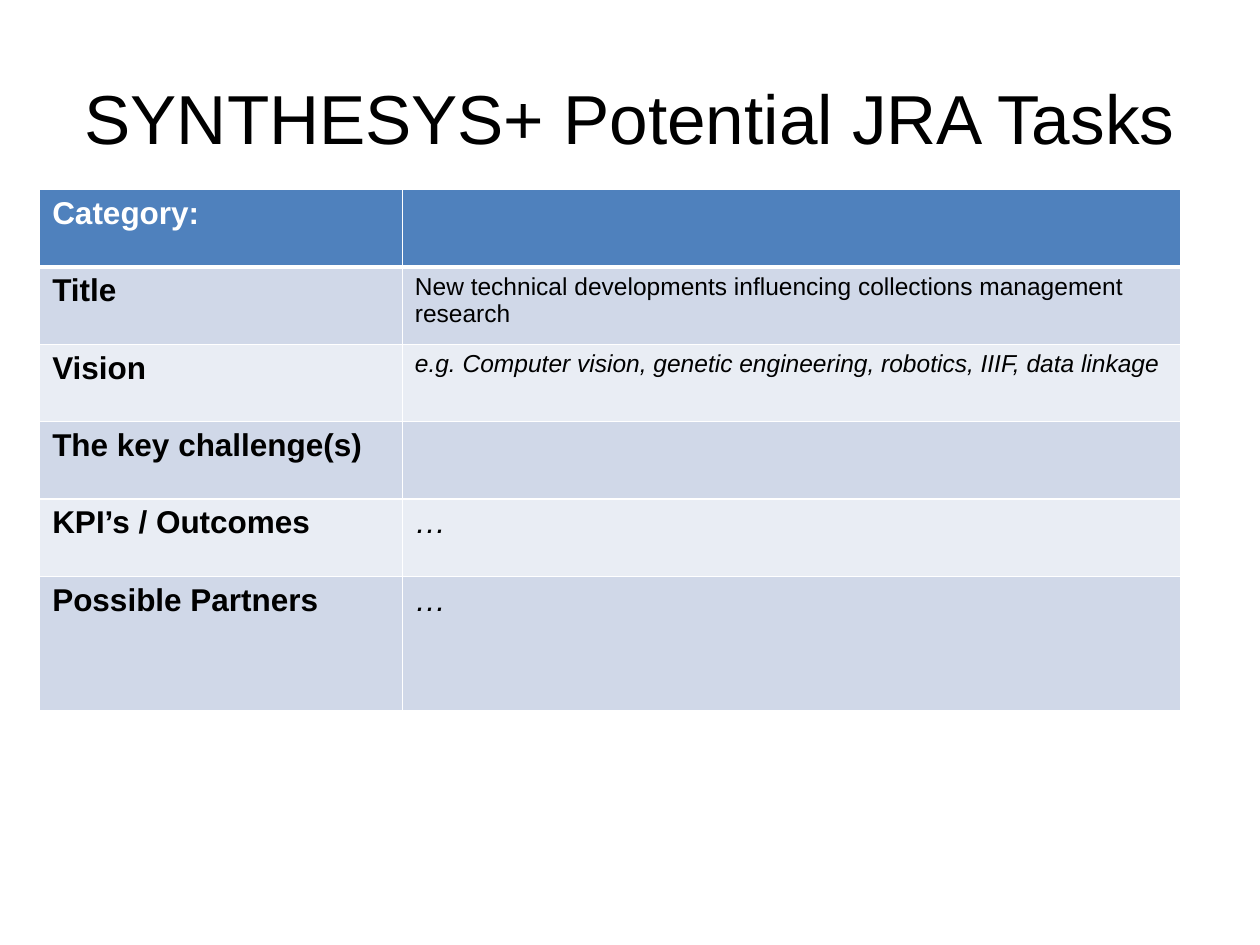
from lxml import etree
from pptx import Presentation
from pptx import util as u
from pptx.dml.color import RGBColor
from pptx.enum import text
from pptx.oxml import ns

COLORS = {
    "header": "4F81BD",
    "dark_band": "D0D8E8",
    "light_band": "E9EDF4",
    "white": "FFFFFF",
    "black": "000000",
}
FONT = "Arial"
COLUMN_WIDTHS = [7.31, 15.7]
ROW_HEIGHTS = [1.56] * 5 + [2.7]
ROWS = [
    ("Category:", "", 18, False),
    ("Title", "New technical developments influencing collections management research", 14, False),
    ("Vision", "e.g. Computer vision, genetic engineering, robotics, IIIF, data linkage", 14, True),
    ("The key challenge(s)", "", 18, False),
    ("KPI’s / Outcomes", "…", 18, True),
    ("Possible Partners", "…", 18, True),
]


def write_text(frame, content, size=18, color="black", bold=False, italic=False, align=None):
    para = frame.paragraphs[0]
    para.alignment = align
    para.font.size = u.Pt(size)
    if not content:
        return
    span = para.add_run()
    span.text = content
    font = span.font
    font.name = FONT
    font.size = u.Pt(size)
    font.bold = bold
    font.italic = italic
    font.color.rgb = RGBColor.from_string(COLORS[color])


def set_borders(cell, bottom_width):
    properties = cell._tc.get_or_add_tcPr()
    widths = {"lnL": 1, "lnR": 1, "lnT": 1, "lnB": bottom_width}
    for index, (tag, width) in enumerate(widths.items()):
        line = etree.Element(ns.qn(f"a:{tag}"), w=str(u.Pt(width)))
        fill = etree.SubElement(line, ns.qn("a:solidFill"))
        etree.SubElement(fill, ns.qn("a:srgbClr"), val=COLORS["white"])
        properties.insert(index, line)


def style_cell(cell, fill, bottom_width=1):
    cell.fill.solid()
    cell.fill.fore_color.rgb = RGBColor.from_string(COLORS[fill])
    set_borders(cell, bottom_width)


def add_title(page, content):
    title = page.shapes.title
    title.left, title.top = u.Cm(1.27), u.Cm(0.76)
    title.width, title.height = u.Cm(22.86), u.Cm(3.18)
    title.text_frame.vertical_anchor = text.MSO_ANCHOR.MIDDLE
    write_text(title.text_frame, content, size=39.6, align=text.PP_ALIGN.CENTER)


def add_task_table(page):
    frame = page.shapes.add_table(
        len(ROWS), len(COLUMN_WIDTHS), u.Cm(0.8), u.Cm(3.82),
        u.Cm(sum(COLUMN_WIDTHS)), u.Cm(sum(ROW_HEIGHTS)),
    )
    table = frame.table
    for column, width in zip(table.columns, COLUMN_WIDTHS):
        column.width = u.Cm(width)
    for index, (label, detail, size, italic) in enumerate(ROWS):
        table.rows[index].height = u.Cm(ROW_HEIGHTS[index])
        is_header = index == 0
        fill = "header" if is_header else ("light_band", "dark_band")[index % 2]
        label_cell, detail_cell = table.rows[index].cells
        for cell in (label_cell, detail_cell):
            style_cell(cell, fill, bottom_width=3 if is_header else 1)
        write_text(label_cell.text_frame, label, bold=True,
                   color="white" if is_header else "black")
        write_text(detail_cell.text_frame, detail, size=size, italic=italic)


def main():
    deck = Presentation()
    deck.slide_width, deck.slide_height = u.Cm(25.4), u.Cm(19.05)
    page = deck.slides.add_slide(deck.slide_layouts.get_by_name("Title Only"))
    add_title(page, "SYNTHESYS+ Potential JRA Tasks")
    add_task_table(page)
    deck.save("out.pptx")


if __name__ == "__main__":
    main()
